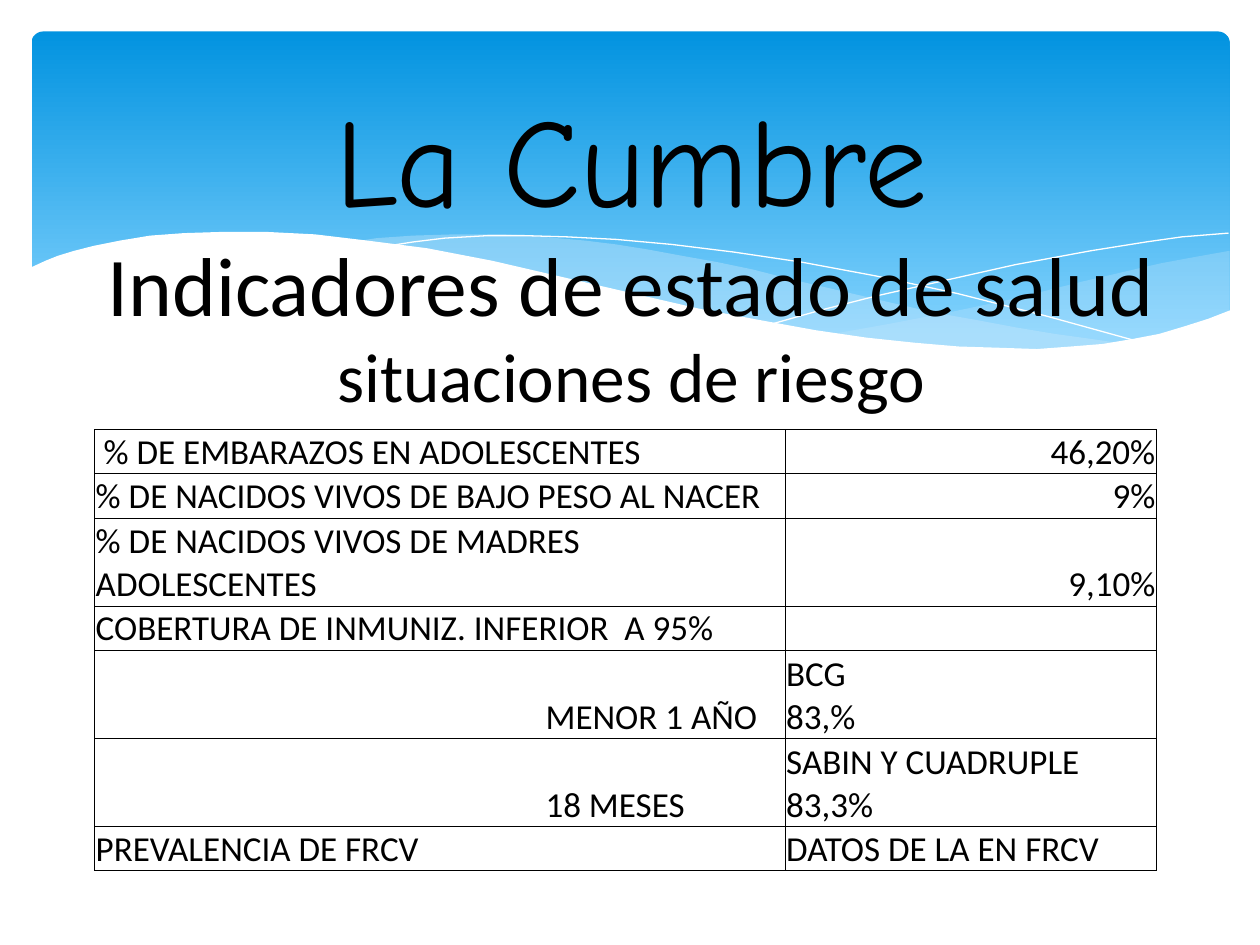
from lxml import etree
from pptx import Presentation
from pptx.dml.color import RGBColor
from pptx.enum.shapes import MSO_SHAPE
from pptx.enum.text import MSO_ANCHOR, MSO_AUTO_SIZE, PP_ALIGN
from pptx.oxml import parse_xml
from pptx.oxml.ns import nsdecls, qn
from pptx.util import Pt

PX = 9144  # EMU per px, 100 px to the inch
ROUNDED = MSO_SHAPE.ROUNDED_RECTANGLE
TOP, BOTTOM = MSO_ANCHOR.TOP, MSO_ANCHOR.BOTTOM
LEFT, CENTER, RIGHT = PP_ALIGN.LEFT, PP_ALIGN.CENTER, PP_ALIGN.RIGHT
NO_AUTOFIT = MSO_AUTO_SIZE.NONE

BLACK = RGBColor(0x00, 0x00, 0x00)
WHITE = RGBColor(0xFF, 0xFF, 0xFF)
SKY_TOP = RGBColor(0x02, 0x93, 0xE0)
SKY_BOTTOM = RGBColor(0x83, 0xD3, 0xFE)
PALE_BLUE = RGBColor(0xC6, 0xE7, 0xFC)

# Wave outlines in px
RIGHT_WAVE = [
    (976, 199), (948, 204), (921, 209), (891, 216), (861, 223), (805, 237),
    (753, 248), (706, 257), (661, 265), (691, 269), (718, 272), (745, 275),
    (769, 277), (803, 278), (835, 277), (863, 275), (889, 272), (913, 267),
    (935, 261), (949, 257), (963, 252), (976, 247)]
MIDDLE_WAVE = [
    (893, 273), (866, 269), (837, 265), (807, 260), (775, 254), (741, 248),
    (706, 240), (668, 231), (629, 222), (598, 214), (569, 208), (541, 203),
    (514, 198), (489, 194), (465, 191), (442, 189), (420, 187), (399, 186),
    (361, 186), (328, 187), (299, 189), (286, 191), (323, 196), (362, 203),
    (404, 211), (449, 222), (491, 232), (530, 240), (566, 248), (601, 255),
    (634, 261), (665, 266), (695, 270), (722, 274), (748, 276), (773, 277),
    (807, 278), (838, 278), (867, 276), (893, 273)]
FALLING_LINE = [
    (309, 195), (328, 192), (353, 189), (387, 187), (416, 187), (450, 188),
    (489, 190), (533, 194), (582, 200), (636, 208), (695, 219), (760, 233),
    (831, 251), (907, 272)]
RISING_LINE = [
    (613, 257), (652, 246), (695, 235), (748, 223), (806, 210), (866, 199),
    (910, 192), (938, 188), (975, 185)]
WHITE_WAVE = [
    (977, 246), (959, 253), (940, 259), (920, 265), (899, 269), (875, 273),
    (850, 275), (823, 277), (793, 276), (761, 275), (726, 272), (688, 268),
    (647, 262), (603, 254), (555, 245), (503, 233), (447, 220), (391, 207),
    (339, 197), (292, 191), (250, 186), (211, 184), (177, 184), (146, 185),
    (119, 187), (95, 191), (75, 195), (59, 199), (46, 203), (36, 207),
    (23, 213), (23, 329), (977, 329)]

TITLE_LINES = [  # text, font, size
    ("La Cumbre", "Comic Neue", 72),
    ("Indicadores de estado de salud", "Calibri", 47.7),
    ("situaciones de riesgo", "Calibri", 39.6)]

INDENT = 358
COLUMN_WIDTHS = [548, 295]
LINE_HEIGHT = 35
ROWS = [  # label, label indent, value, value alignment, lines of text
    (" % DE EMBARAZOS EN ADOLESCENTES", 1, "46,20%", RIGHT, 1),
    ("% DE NACIDOS VIVOS DE BAJO PESO AL NACER", 1, "9%", RIGHT, 1),
    ("% DE NACIDOS VIVOS DE MADRES ADOLESCENTES", 1, "9,10%", RIGHT, 2),
    ("COBERTURA DE INMUNIZ. INFERIOR  A 95%", 1, "", LEFT, 1),
    ("MENOR 1 AÑO", INDENT, "BCG\v83,%", LEFT, 2),
    ("18 MESES", INDENT, "SABIN Y CUADRUPLE 83,3%", LEFT, 2),
    ("PREVALENCIA DE FRCV", 1, "DATOS DE LA EN FRCV", LEFT, 1)]


def px(*lengths):
    return [length * PX for length in lengths]


def format_run(run, font, size):
    run.font.name = font
    run.font.size = Pt(size)
    run.font.color.rgb = BLACK


def add_sky(slide):
    sky = slide.shapes.add_shape(ROUNDED, *px(25, 25, 951, 270))
    sky.adjustments[0] = 0.034
    sky.shadow.inherit = False
    sky.line.fill.background()
    sky.fill.gradient()
    sky.fill.gradient_angle = 270
    stops = sky.fill.gradient_stops
    for stop, color, position in zip(stops, (SKY_TOP, SKY_BOTTOM), (0, 0.9)):
        stop.color.rgb = color
        stop.position = position


def add_outline(slide, points, closed):
    builder = slide.shapes.build_freeform(*points[0], scale=PX)
    builder.add_line_segments(points[1:], close=closed)
    shape = builder.convert_to_shape()
    shape.shadow.inherit = False
    return shape


def add_wave(slide, points, color, opacity=100):
    wave = add_outline(slide, points, True)
    wave.line.fill.background()
    wave.fill.solid()
    wave.fill.fore_color.rgb = color
    if opacity < 100:
        color_element = wave.element.spPr.find(qn("a:solidFill"))[0]
        alpha = etree.SubElement(color_element, qn("a:alpha"))
        alpha.set("val", str(opacity * 1000))


def add_curve(slide, points):
    curve = add_outline(slide, points, False)
    curve.fill.background()
    curve.line.color.rgb = WHITE
    curve.line.width = 0


def format_title(slide):
    title = slide.shapes.title
    title.left, title.top, title.width, title.height = px(51, 28, 900, 125)
    text_frame = title.text_frame
    text_frame.auto_size = NO_AUTOFIT
    text_frame.word_wrap = True
    text_frame.vertical_anchor = TOP
    text_frame.margin_top = 37 * PX
    text_frame.text = "\v".join(line for line, _, _ in TITLE_LINES)
    paragraph = text_frame.paragraphs[0]
    paragraph.alignment = CENTER
    for run, (_, font, size) in zip(paragraph.runs, TITLE_LINES):
        format_run(run, font, size)
    # Bring the title in front of the waves
    title.element.getparent().append(title.element)


def add_borders(cell):
    properties = cell._tc.get_or_add_tcPr()
    for side in ("lnL", "lnR", "lnT", "lnB"):
        properties.append(parse_xml(
            f'<a:{side} {nsdecls("a")} w="6350"><a:solidFill>'
            f'<a:srgbClr val="{BLACK}"/></a:solidFill></a:{side}>'))


def fill_cell(cell, text, indent, alignment):
    add_borders(cell)
    cell.fill.background()
    cell.vertical_anchor = BOTTOM
    cell.margin_left, cell.margin_right = px(indent, 1)
    cell.margin_top, cell.margin_bottom = px(1, 0)
    cell.text_frame.text = text
    paragraph = cell.text_frame.paragraphs[0]
    paragraph.alignment = alignment
    for run in paragraph.runs:
        format_run(run, "Calibri", 20)


def add_indicator_table(slide):
    height = LINE_HEIGHT * sum(row[-1] for row in ROWS)
    frame = slide.shapes.add_table(
        len(ROWS), len(COLUMN_WIDTHS), *px(75, 341, sum(COLUMN_WIDTHS), height))
    table = frame.table
    table.first_row = table.horz_banding = False
    for column, width in zip(table.columns, COLUMN_WIDTHS):
        column.width = width * PX
    for row, (label, indent, value, alignment, lines) in zip(table.rows, ROWS):
        row.height = lines * LINE_HEIGHT * PX
        fill_cell(row.cells[0], label, indent, LEFT)
        fill_cell(row.cells[1], value, 1, alignment)


def main():
    presentation = Presentation()
    presentation.slide_width, presentation.slide_height = px(1000, 750)
    slide = presentation.slides.add_slide(presentation.slide_layouts[5])

    # Sky and waves
    add_sky(slide)
    add_wave(slide, RIGHT_WAVE, PALE_BLUE, 29)
    add_wave(slide, MIDDLE_WAVE, PALE_BLUE, 40)
    add_curve(slide, FALLING_LINE)
    add_curve(slide, RISING_LINE)
    add_wave(slide, WHITE_WAVE, WHITE)

    # Content
    format_title(slide)
    add_indicator_table(slide)
    presentation.save("out.pptx")


if __name__ == "__main__":
    main()
